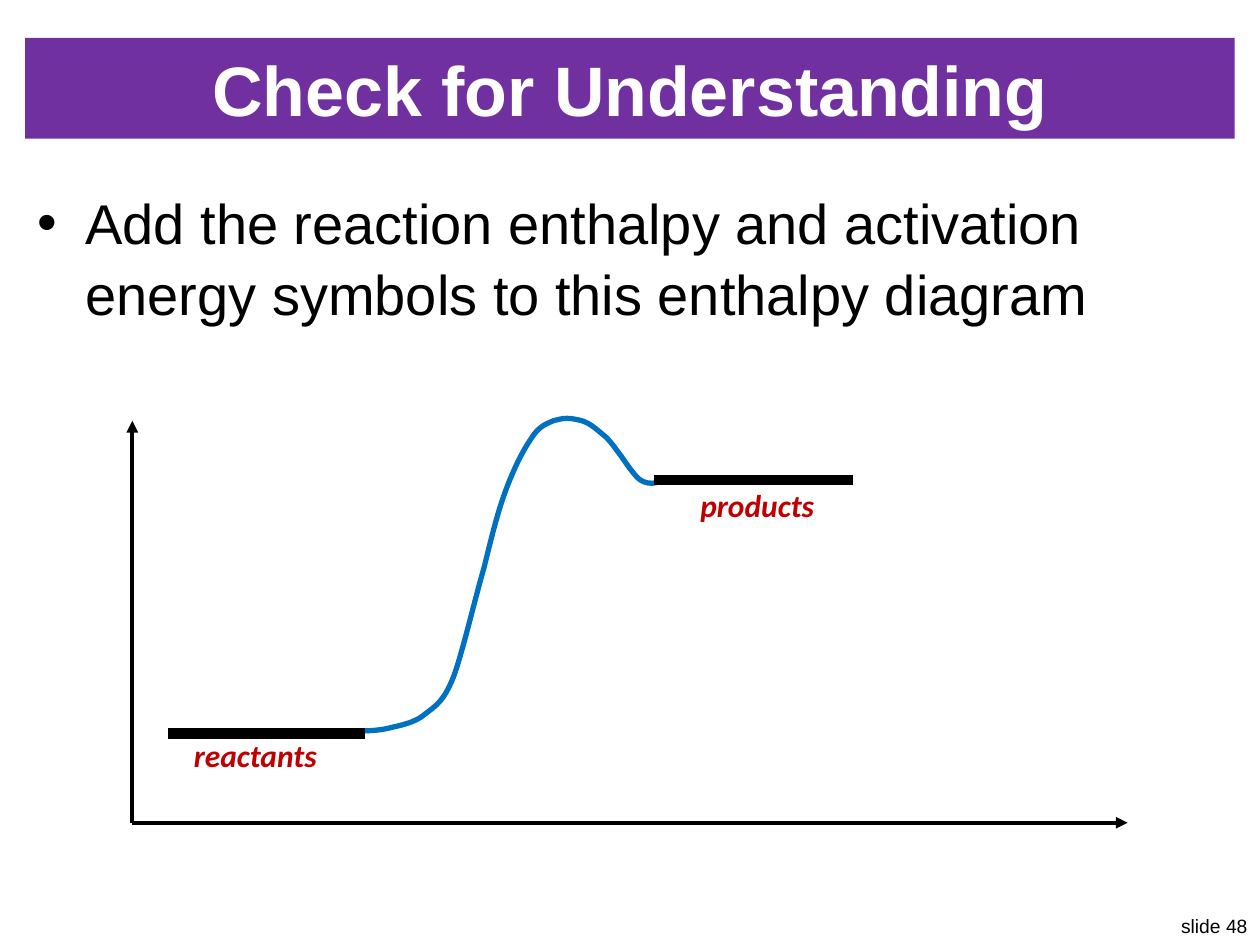
"""Build the enthalpy diagram slide for checking understanding."""
from dataclasses import dataclass

from lxml.etree import SubElement
from pptx import Presentation
from pptx.dml.color import RGBColor
from pptx.enum.shapes import MSO_CONNECTOR, MSO_SHAPE
from pptx.enum.text import MSO_ANCHOR, MSO_AUTO_SIZE, PP_ALIGN
from pptx.oxml.ns import qn
from pptx.shapes.connector import Connector
from pptx.slide import Slide
from pptx.text.text import TextFrame, _Paragraph as Paragraph
from pptx.util import Inches, Pt

Point = tuple[float, float]


@dataclass(frozen=True)
class Theme:
    banner: RGBColor = RGBColor(0x70, 0x30, 0xA0)
    white: RGBColor = RGBColor(0xFF, 0xFF, 0xFF)
    ink: RGBColor = RGBColor(0x00, 0x00, 0x00)
    curve: RGBColor = RGBColor(0x00, 0x70, 0xC0)
    label: RGBColor = RGBColor(0xC0, 0x00, 0x00)
    font: str = "Arial"
    label_font: str = "Calibri"
    title_size: float = 40
    body_size: float = 32
    label_size: float = 18
    number_size: float = 11
    curve_width: float = 3
    axis_width: float = 2.25
    level_width: float = 6


@dataclass(frozen=True)
class Box:
    left: float
    top: float
    width: float
    height: float

    def lengths(self) -> list[Inches]:
        return [Inches(v) for v in (self.left, self.top, self.width, self.height)]


@dataclass(frozen=True)
class TextStyle:
    size: float
    color: RGBColor
    font: str
    bold: bool = False
    italic: bool = False
    align: PP_ALIGN = PP_ALIGN.LEFT


@dataclass(frozen=True)
class Line:
    start: Point
    end: Point
    width: float
    arrow: bool = False


@dataclass(frozen=True)
class Label:
    text: str
    box: Box
    style: TextStyle


THEME = Theme()
TITLE_STYLE = TextStyle(THEME.title_size, THEME.white, THEME.font, bold=True, align=PP_ALIGN.CENTER)
BODY_STYLE = TextStyle(THEME.body_size, THEME.ink, THEME.font)
NUMBER_STYLE = TextStyle(THEME.number_size, THEME.ink, THEME.font, align=PP_ALIGN.RIGHT)
REACTANT_STYLE = TextStyle(THEME.label_size, THEME.label, THEME.label_font, True, True)
PRODUCT_STYLE = TextStyle(THEME.label_size, THEME.label, THEME.label_font, True, True, PP_ALIGN.RIGHT)

ORIGIN = (1.05, 6.53)
AXES = [
    Line((1.05, 3.34), ORIGIN, THEME.axis_width, arrow=True),
    Line((8.95, 6.53), ORIGIN, THEME.axis_width, arrow=True),
]
LEVELS = [
    Line((2.9, 5.82), (1.33, 5.82), THEME.level_width),
    Line((6.77, 3.81), (5.19, 3.81), THEME.level_width),
]
LABELS = [
    Label("slide 48", Box(9.25, 7.21, 0.75, 0.29), NUMBER_STYLE),
    Label("reactants", Box(1.44, 5.79, 1.19, 0.4), REACTANT_STYLE),
    Label("products", Box(5.44, 3.81, 1.12, 0.4), PRODUCT_STYLE),
]
CURVE_START = (5.21, 3.83)
CURVE_SEGMENTS = [
    ((5.17, 3.84), (5.12, 3.84), (5.07, 3.8)),
    ((5.03, 3.77), (4.93, 3.62), (4.93, 3.62)),
    ((4.89, 3.57), (4.86, 3.52), (4.81, 3.47)),
    ((4.76, 3.43), (4.69, 3.36), (4.62, 3.34)),
    ((4.58, 3.33), (4.54, 3.32), (4.5, 3.32)),
    ((4.46, 3.32), (4.43, 3.33), (4.39, 3.34)),
    ((4.32, 3.37), (4.27, 3.39), (4.21, 3.49)),
    ((4.14, 3.59), (4.06, 3.76), (4, 3.93)),
    ((3.94, 4.1), (3.9, 4.27), (3.84, 4.51)),
    ((3.77, 4.75), (3.67, 5.18), (3.6, 5.37)),
    ((3.52, 5.57), (3.46, 5.6), (3.37, 5.67)),
    ((3.29, 5.74), (3.16, 5.76), (3.08, 5.78)),
    ((3, 5.8), (2.89, 5.8), (2.89, 5.8)),
]


def write(tf: TextFrame, text: str, style: TextStyle) -> Paragraph:
    """Put one styled run in the first paragraph."""
    p = tf.paragraphs[0]
    p.alignment = style.align
    r = p.add_run()
    r.text = text
    r.font.size = Pt(style.size)
    r.font.name = style.font
    r.font.bold = style.bold
    r.font.italic = style.italic
    r.font.color.rgb = style.color
    return p


def add_title(s: Slide, text: str) -> None:
    """Draw the title on its banner."""
    sp = s.shapes.add_shape(MSO_SHAPE.RECTANGLE, *Box(0.2, 0.3, 9.6, 0.8).lengths())
    sp.shadow.inherit = False
    sp.fill.solid()
    sp.fill.fore_color.rgb = THEME.banner
    sp.line.fill.background()
    sp.text_frame.word_wrap = True
    sp.text_frame.vertical_anchor = MSO_ANCHOR.MIDDLE
    write(sp.text_frame, text, TITLE_STYLE)


def add_body(s: Slide, text: str) -> None:
    """Write the bulleted task."""
    tf = s.shapes.add_textbox(*Box(0.2, 1.42, 9.6, 5.61).lengths()).text_frame
    tf.word_wrap = True
    p = write(tf, text, BODY_STYLE)
    p.space_before = Pt(12)
    p.line_spacing = 1.05
    props = p._p.get_or_add_pPr()
    props.set("marL", str(Inches(0.38)))
    props.set("indent", str(Inches(-0.38)))
    SubElement(props, qn("a:buFont")).set("typeface", THEME.font)
    SubElement(props, qn("a:buChar")).set("char", "•")


def add_label(s: Slide, label: Label) -> None:
    """Write a short unwrapped label."""
    tf = s.shapes.add_textbox(*label.box.lengths()).text_frame
    tf.word_wrap = False
    tf.auto_size = MSO_AUTO_SIZE.SHAPE_TO_FIT_TEXT
    write(tf, label.text, label.style)


def add_line(s: Slide, line: Line) -> Connector:
    """Draw a straight line, with an arrowhead at its start if asked."""
    ends = [Inches(v) for v in (*line.start, *line.end)]
    cxn = s.shapes.add_connector(MSO_CONNECTOR.STRAIGHT, *ends)
    cxn.line.color.rgb = THEME.ink
    cxn.line.width = Pt(line.width)
    if line.arrow:
        SubElement(cxn.line._get_or_add_ln(), qn("a:headEnd")).set("type", "triangle")
    SubElement(cxn._element.spPr, qn("a:effectLst"))
    return cxn


def add_curve(s: Slide, start: Point, segments: list[tuple[Point, Point, Point]]) -> None:
    """Draw an open outline of cubic Bézier segments."""
    anchors = [start] + [segment[-1] for segment in segments]
    left, top = (min(values) for values in zip(*anchors))
    builder = s.shapes.build_freeform(*(round(v * 100) for v in start), scale=Inches(0.01))
    builder.add_line_segments([(round(x * 100), round(y * 100)) for x, y in anchors[1:]], close=False)
    sp = builder.convert_to_shape()
    sp.shadow.inherit = False
    sp.fill.background()
    sp.line.color.rgb = THEME.curve
    sp.line.width = Pt(THEME.curve_width)
    outline = sp._element.spPr.find(".//" + qn("a:path"))
    for step in outline.findall(qn("a:lnTo")):
        outline.remove(step)
    for segment in segments:
        bezier = SubElement(outline, qn("a:cubicBezTo"))
        for x, y in segment:
            pt = SubElement(bezier, qn("a:pt"))
            pt.set("x", str(round((x - left) * 100)))
            pt.set("y", str(round((y - top) * 100)))


def main() -> None:
    """Build and save the slide."""
    prs = Presentation()
    prs.slide_width, prs.slide_height = Inches(10), Inches(7.5)
    s = prs.slides.add_slide(prs.slide_layouts[6])
    add_title(s, "Check for Understanding")
    add_body(s, "Add the reaction enthalpy and activation energy symbols to this enthalpy diagram")
    add_curve(s, CURVE_START, CURVE_SEGMENTS)
    for line in AXES + LEVELS:
        add_line(s, line)
    for label in LABELS:
        add_label(s, label)
    prs.save("out.pptx")


if __name__ == "__main__":
    main()
